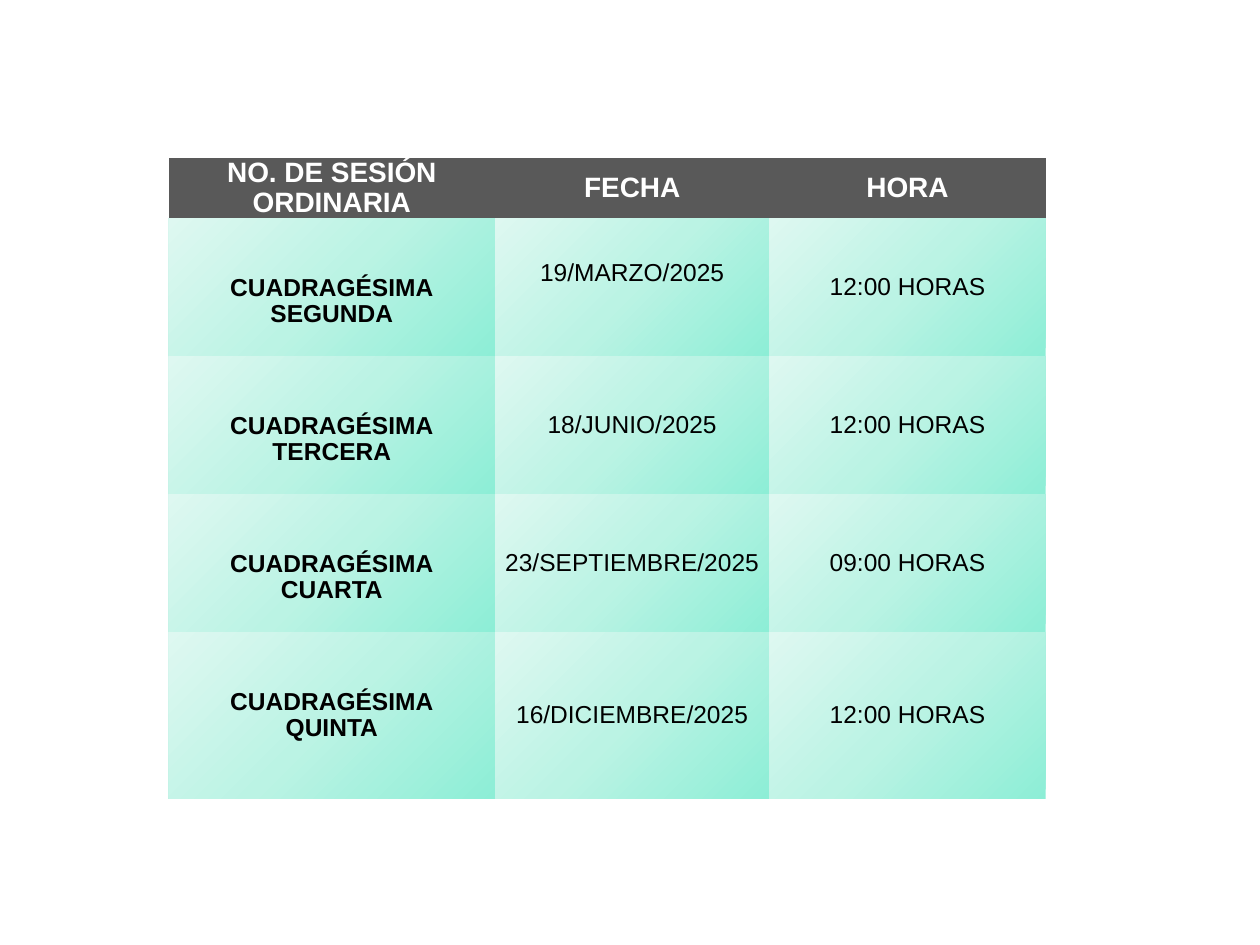
from lxml import etree
from pptx import Presentation
from pptx.dml.color import RGBColor
from pptx.enum.text import MSO_ANCHOR, PP_ALIGN
from pptx.oxml import parse_xml
from pptx.oxml.ns import qn
from pptx.util import Cm, Pt

MIDDLE = MSO_ANCHOR.MIDDLE
CENTER = PP_ALIGN.CENTER
NS = "http://schemas.openxmlformats.org/drawingml/2006/main"
PLAIN = "{2D5ABB26-0587-4C30-8999-92F81FD0307C}"  # no style, no grid

WIDTHS = [6.58, 5.53, 5.57]
HEIGHTS = [1.23, 2.78, 2.78, 2.78, 3.35]
STOPS = [(0, "8DEED6"), (50, "BBF3E4"), (100, "DEF8F1")]
SHIFT = 0.56

HEADS = ["NO. DE SESIÓN ORDINARIA", "FECHA", "HORA"]
# ordinal, date, hour, top inset of the name, bottom inset of date
ROWS = [
    ("SEGUNDA", "19/MARZO/2025", "12:00 HORAS", SHIFT, SHIFT),
    ("TERCERA", "18/JUNIO/2025", "12:00 HORAS", SHIFT, 0),
    ("CUARTA", "23/SEPTIEMBRE/2025", "09:00 HORAS", SHIFT, 0),
    ("QUINTA", "16/DICIEMBRE/2025", "12:00 HORAS", 0, 0),
]


def color(code):
    return RGBColor.from_string(code)


def write(cell, *lines, size=14, bold=False, ink="000000", top=0, bottom=0):
    """Fill a cell with centred text, one paragraph a line."""
    cell.vertical_anchor = MIDDLE
    cell.margin_left = cell.margin_right = 0
    cell.margin_top, cell.margin_bottom = Cm(top), Cm(bottom)
    frame = cell.text_frame
    frame.text = "\n".join(lines)
    for para in frame.paragraphs:
        para.alignment = CENTER
        para.line_spacing = 0.97
        for run in para.runs:
            font = run.font
            font.name, font.size, font.bold = "Arial", Pt(size), bold
            font.color.rgb = color(ink)


def shade(cell):
    """Give a cell the three-stop diagonal gradient."""
    grad = parse_xml(f'<a:gradFill xmlns:a="{NS}" rotWithShape="1"/>')
    stops = etree.SubElement(grad, qn("a:gsLst"))
    for place, code in STOPS:
        stop = etree.SubElement(stops, qn("a:gs"), pos=str(place * 1000))
        etree.SubElement(stop, qn("a:srgbClr"), val=code)
    etree.SubElement(grad, qn("a:lin"), ang=str(225 * 60000), scaled="1")
    cell._tc.get_or_add_tcPr().append(grad)


def add_grid(slide):
    frame = slide.shapes.add_table(
        len(HEIGHTS), len(WIDTHS), Cm(3.4), Cm(3.18),
        Cm(sum(WIDTHS)), Cm(sum(HEIGHTS)))
    table = frame.table
    table.horz_banding = False
    table._tbl.tblPr.find(qn("a:tableStyleId")).text = PLAIN
    for col, width in zip(table.columns, WIDTHS):
        col.width = Cm(width)
    for row, height in zip(table.rows, HEIGHTS):
        row.height = Cm(height)
    return table


def main():
    prs = Presentation()
    prs.slide_width, prs.slide_height = Cm(25.4), Cm(19.05)
    slide = prs.slides.add_slide(prs.slide_layouts[6])
    table = add_grid(slide)
    for cell, head in zip(table.rows[0].cells, HEADS):
        write(cell, head, size=16, bold=True, ink="FFFFFF")
        cell.fill.solid()
        cell.fill.fore_color.rgb = color("595959")
    for i, (name, date, hour, top, bottom) in enumerate(ROWS, 1):
        cells = [table.cell(i, j) for j in range(len(WIDTHS))]
        write(cells[0], "CUADRAGÉSIMA", name, bold=True, top=top)
        write(cells[1], date, bottom=bottom)
        write(cells[2], hour)
        for cell in cells:
            shade(cell)
    prs.save("out.pptx")


if __name__ == "__main__":
    main()
